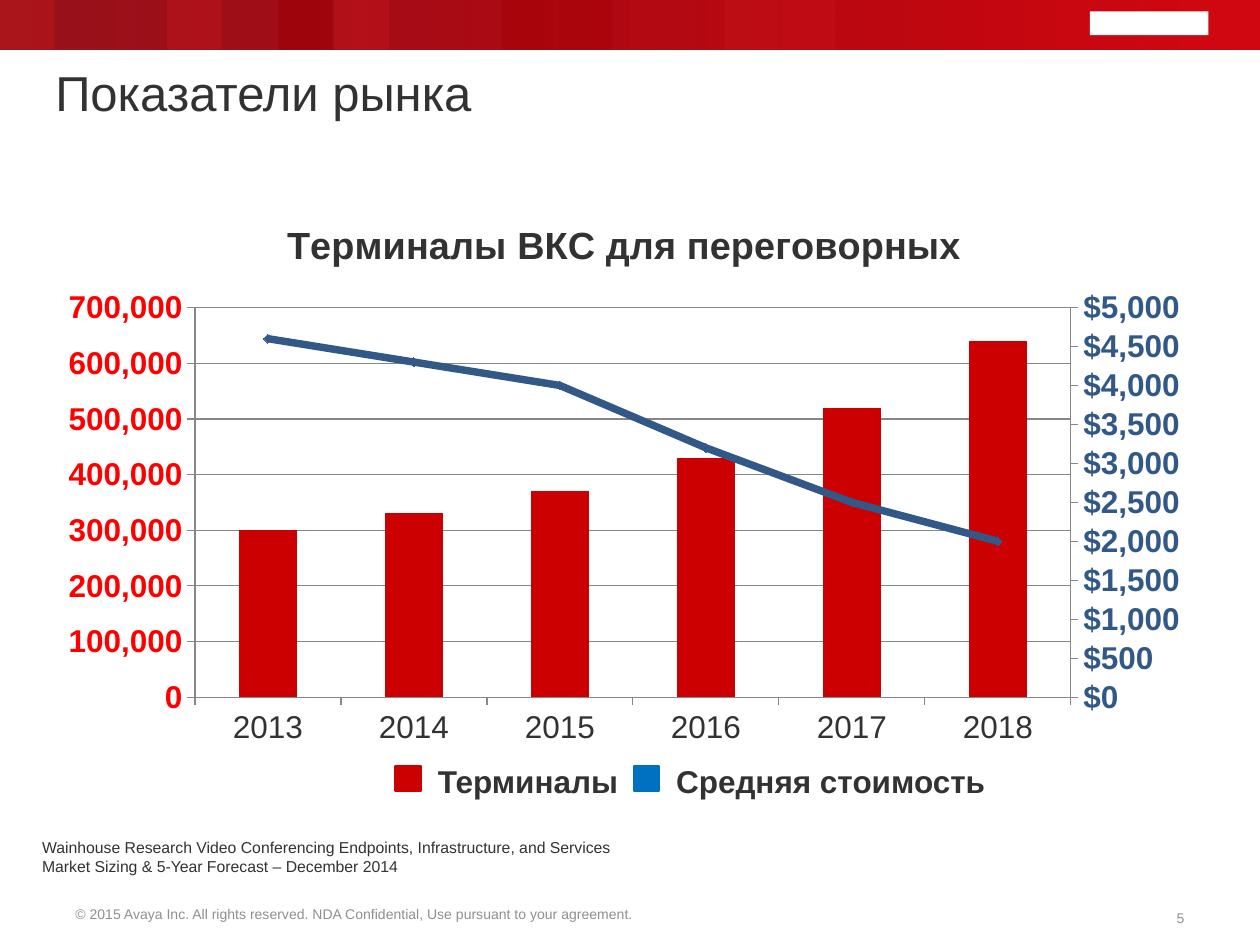
import copy
import pptx
import pptx.chart.axis
import pptx.chart.data
import pptx.dml.color
import pptx.enum.chart
import pptx.enum.shapes
import pptx.enum.text
import pptx.oxml
import pptx.oxml.ns
from pptx.util import Cm

COLORS = {
    "text": "323232", "muted": "8F8F8F", "grid": "878787", "white": "FFFFFF",
    "bright": "FF4747", "dark": "990000", "band_left": "91050F", "band_right": "D10811",
    "bars": "CC0000", "left_axis": "FF0000", "line": "325887", "legend_blue": "0070C0",
}
RGB = {name: pptx.dml.color.RGBColor.from_string(value) for name, value in COLORS.items()}
ALIGN = pptx.enum.text.PP_ALIGN
ANCHOR = pptx.enum.text.MSO_ANCHOR
qn = pptx.oxml.ns.qn

presentation = pptx.Presentation()
presentation.slide_width, presentation.slide_height = Cm(25.4), Cm(19.05)
slide = presentation.slides.add_slide(presentation.slide_layouts[5])


def write_text(shape, text, size=18, color="text", bold=False, align=ALIGN.LEFT,
               anchor=ANCHOR.TOP, wrap=True, spacing=0.9):
    frame = shape.text_frame
    frame.text = text
    frame.word_wrap = wrap
    frame.auto_size = pptx.enum.text.MSO_AUTO_SIZE.NONE
    frame.vertical_anchor = anchor
    for paragraph in frame.paragraphs:
        paragraph.alignment = align
        paragraph.line_spacing = spacing
        paragraph.font.name = "Arial"
        paragraph.font.size = pptx.util.Pt(size)
        paragraph.font.bold = bold
        paragraph.font.color.rgb = RGB[color]


def add_rectangle(left, top, width, height, color):
    shape = slide.shapes.add_shape(pptx.enum.shapes.MSO_SHAPE.RECTANGLE,
                                   Cm(left), Cm(top), Cm(width), Cm(height))
    shape.shadow.inherit = False
    shape.fill.solid()
    shape.fill.fore_color.rgb = RGB[color]
    shape.line.fill.background()
    return shape


# Header band: tiles between two translucent gradients
band_top, band_height = -0.02, 1.02
tile_step = 25.4 / 22.6
tiles = [(14, "bright"), (13, "bright"), (10, "dark"), (9, "dark"),
         (6, "bright"), (5, "dark"), (3, "bright"), (0, "bright")]
for layer in range(2):
    band = add_rectangle(0, band_top, 25.4, band_height, "band_left")
    band.fill.gradient()
    band.fill.gradient_angle = 0
    for stop, color in zip(band.fill.gradient_stops, ("band_left", "band_right")):
        stop.color.rgb = RGB[color]
    first_color = next(band._element.spPr.iter(qn("a:srgbClr")))
    first_color.append(first_color.makeelement(qn("a:alpha"), {"val": "76000"}))
    if layer == 0:
        for position, color in tiles:
            add_rectangle(position * tile_step, band_top, 1.1, band_height, color)

# Plain block in the logo's place
add_rectangle(21.97, 0.23, 2.39, 0.48, "white")

# Title
title = slide.shapes.title
title.left, title.top, title.width, title.height = Cm(0.86), Cm(1.27), Cm(23.27), Cm(1.9)
write_text(title, "Показатели рынка", size=28)

# Chart data
chart_width, chart_height = 23.32, 11.28
chart_data = pptx.chart.data.CategoryChartData()
chart_data.categories = ["2013", "2014", "2015", "2016", "2017", "2018"]
chart_data.add_series("Терминалы", [300000, 330000, 370000, 430000, 520000, 640000])
chart_data.add_series("Средняя стоимость", [4600, 4300, 4000, 3200, 2500, 2000])
chart = slide.shapes.add_chart(pptx.enum.chart.XL_CHART_TYPE.COLUMN_CLUSTERED, Cm(0.94),
                               Cm(3.96), Cm(chart_width), Cm(chart_height), chart_data).chart
chart.has_legend = False
chart.font.name = "Arial"
chart.font.size = pptx.util.Pt(18)
chart.font.color.rgb = RGB["text"]

# Chart title
chart.has_title = True
write_text(chart.chart_title, "Терминалы ВКС для переговорных", size=21.6, bold=True,
           align=ALIGN.CENTER, spacing=1.0)
chart.chart_title.include_in_layout = False

# Second axis pair, and the second series moved to a line on it
plot_area = chart._chartSpace.chart.plotArea
bar_chart = plot_area.find(qn("c:barChart"))
category_element = plot_area.find(qn("c:catAx"))
value_element = plot_area.find(qn("c:valAx"))
right_element = copy.deepcopy(value_element)
hidden_element = copy.deepcopy(category_element)
value_element.addnext(right_element)
right_element.addnext(hidden_element)
for element, own, other in ((right_element, "5001", "5002"), (hidden_element, "5002", "5001")):
    element.find(qn("c:axId")).set("val", own)
    element.find(qn("c:crossAx")).set("val", other)
right_element.find(qn("c:axPos")).set("val", "r")
right_element.find(qn("c:crosses")).set("val", "max")
hidden_element.find(qn("c:delete")).set("val", "1")

line_chart = pptx.oxml.parse_xml(
    '<c:lineChart xmlns:c="http://schemas.openxmlformats.org/drawingml/2006/chart">'
    '<c:grouping val="standard"/><c:varyColors val="0"/><c:marker val="1"/>'
    '<c:axId val="5002"/><c:axId val="5001"/></c:lineChart>')
line_series = bar_chart.findall(qn("c:ser"))[1]
for element in line_series.findall(qn("c:invertIfNegative")):
    line_series.remove(element)
line_chart.insert(2, line_series)
bar_chart.addnext(line_chart)

# Series formats
bar_plot, line_plot = chart.plots
bar_plot.vary_by_categories = False
bar_plot.gap_width = 150
bars, prices = bar_plot.series[0], line_plot.series[0]
bars.format.fill.solid()
bars.format.fill.fore_color.rgb = RGB["bars"]
prices.smooth = False
prices.format.line.color.rgb = RGB["line"]
prices.format.line.width = pptx.util.Pt(4.25)
prices.marker.style = pptx.enum.chart.XL_MARKER_STYLE.DIAMOND
prices.marker.size = 5
prices.marker.format.fill.solid()
prices.marker.format.fill.fore_color.rgb = RGB["line"]
prices.marker.format.line.color.rgb = RGB["line"]

# Axis formats
left_axis = pptx.chart.axis.ValueAxis(value_element)
right_axis = pptx.chart.axis.ValueAxis(right_element)
for axis, color, maximum, step, number_format in (
        (left_axis, "left_axis", 700000, 100000, "#,##0"),
        (right_axis, "line", 5000, 500, '"$"#,##0')):
    axis.minimum_scale, axis.maximum_scale, axis.major_unit = 0, maximum, step
    axis.tick_labels.number_format = number_format
    axis.tick_labels.number_format_is_linked = False
    axis.tick_labels.font.size = pptx.util.Pt(18)
    axis.tick_labels.font.bold = True
    axis.tick_labels.font.color.rgb = RGB[color]
for axis in (left_axis, right_axis, chart.category_axis):
    axis.major_tick_mark = pptx.enum.chart.XL_TICK_MARK.OUTSIDE
    axis.format.line.color.rgb = RGB["grid"]
chart.category_axis.tick_label_position = pptx.enum.chart.XL_TICK_LABEL_POSITION.LOW
right_axis.has_major_gridlines = False
left_axis.major_gridlines.format.line.color.rgb = RGB["grid"]

# Places of the plot area and the chart title, in centimetres within the chart
chart_size = {"x": chart_width, "y": chart_height, "w": chart_width, "h": chart_height}
for parent, target, places in (
        (plot_area, "inner", {"x": 2.99, "y": 2.24, "w": 17.66, "h": 7.86}),
        (chart.chart_title._element, None, {"x": 4.71, "y": 0.36})):
    for element in parent.findall(qn("c:layout")):
        parent.remove(element)
    marks = f'<c:layoutTarget val="{target}"/>' if target else ""
    marks += "".join(f'<c:{key}Mode val="edge"/>' for key in "xy")
    marks += "".join(f'<c:{key} val="{value / chart_size[key]}"/>'
                     for key, value in places.items())
    layout = pptx.oxml.parse_xml(
        '<c:layout xmlns:c="http://schemas.openxmlformats.org/drawingml/2006/chart">'
        f'<c:manualLayout>{marks}</c:manualLayout></c:layout>')
    parent.insert(0 if target else 1, layout)

# Legend
for left, color, label in ((7.98, "bars", "Терминалы"),
                           (12.78, "legend_blue", "Средняя стоимость")):
    key = add_rectangle(left, 15.44, 0.51, 0.51, color)
    key.line.color.rgb = RGB[color]
    key.line.width = pptx.util.Pt(1.5)
    box = slide.shapes.add_textbox(Cm(left + 0.6), Cm(15.32), Cm(2.54), Cm(0.97))
    write_text(box, label, bold=True, wrap=False)

# Source
source = slide.shapes.add_textbox(Cm(0.6), Cm(16.79), Cm(23.09), Cm(0.99))
write_text(source, "Wainhouse Research Video Conferencing Endpoints, Infrastructure, and Services\n"
           "Market Sizing & 5-Year Forecast – December 2014", size=9, spacing=1.0)
source.text_frame.margin_top = source.text_frame.margin_bottom = Cm(0.1)

# Footer
copyright_box = slide.shapes.add_textbox(Cm(1.27), Cm(18.16), Cm(11.81), Cm(0.56))
write_text(copyright_box, "© 2015 Avaya Inc. All rights reserved. NDA Confidential, "
           "Use pursuant to your agreement.", size=8, color="muted",
           anchor=ANCHOR.MIDDLE, wrap=False)
number_box = slide.shapes.add_textbox(Cm(23.27), Cm(18.24), Cm(0.86), Cm(0.56))
write_text(number_box, "5", size=8, color="muted", align=ALIGN.RIGHT,
           anchor=ANCHOR.MIDDLE, wrap=False)

presentation.save("out.pptx")
